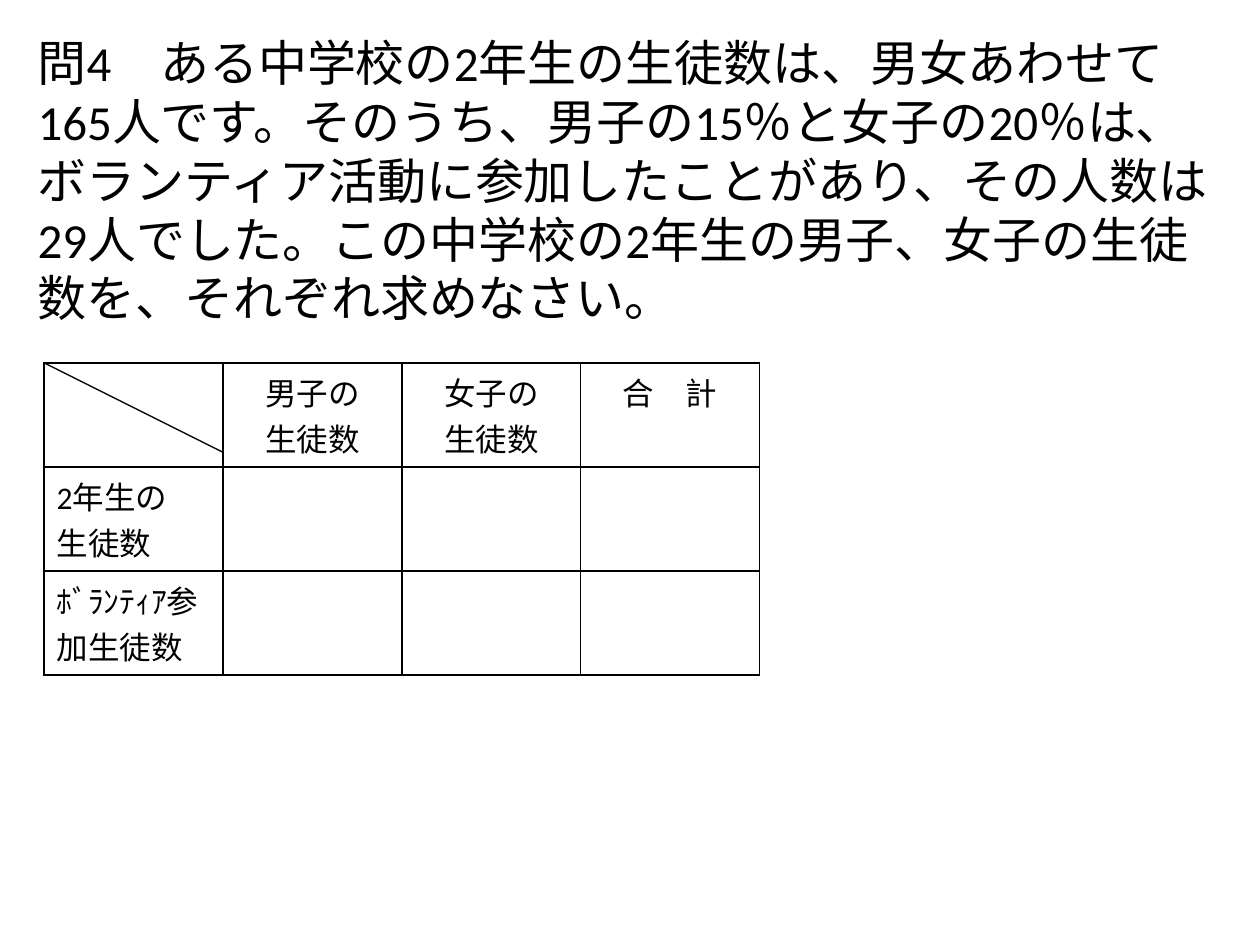
"""Build a word-problem slide with a blank table for organising the quantities."""
from dataclasses import dataclass

from lxml import etree
from pptx import Presentation
from pptx.dml.color import RGBColor
from pptx.enum.shapes import MSO_CONNECTOR
from pptx.enum.text import PP_ALIGN
from pptx.oxml.ns import qn
from pptx.util import Inches, Pt

LEFT, CENTER = PP_ALIGN.LEFT, PP_ALIGN.CENTER
STRAIGHT = MSO_CONNECTOR.STRAIGHT


@dataclass(frozen=True)
class Theme:
    font: str = "Calibri"
    ink: str = "000000"
    problem_size: int = 28
    table_size: int = 18
    border_width: float = 1
    diagonal_width: float = 0.75


theme = Theme()
ink = RGBColor.from_string(theme.ink)


def write_text(frame, text, size, align=LEFT, space_before=0):
    for index, line in enumerate(text.split("\n")):
        paragraph = frame.add_paragraph() if index else frame.paragraphs[0]
        paragraph.alignment = align
        paragraph.space_before = Pt(space_before)
        run = paragraph.add_run()
        run.text = line
        run.font.name = theme.font
        run.font.size = Pt(size)
        run.font.color.rgb = ink


def set_borders(cell):
    properties = cell._tc.get_or_add_tcPr()
    for index, side in enumerate(("lnL", "lnR", "lnT", "lnB")):
        border = etree.Element(qn(f"a:{side}"), w=str(Pt(theme.border_width)))
        fill = etree.SubElement(border, qn("a:solidFill"))
        etree.SubElement(fill, qn("a:srgbClr"), val=theme.ink)
        properties.insert(index, border)


presentation = Presentation()
presentation.slide_width = Inches(10)
presentation.slide_height = Inches(7.5)
slide = presentation.slides.add_slide(presentation.slide_layouts[6])

problem = (
    "問4　ある中学校の2年生の生徒数は、男女あわせて165人です。"
    "そのうち、男子の15％と女子の20％は、ボランティア活動に参加したことがあり、"
    "その人数は29人でした。この中学校の2年生の男子、女子の生徒数を、それぞれ求めなさい。"
)
problem_box = slide.shapes.add_textbox(Inches(0.2), Inches(0.21), Inches(9.69), Inches(2.52))
problem_box.text_frame.word_wrap = True
write_text(problem_box.text_frame, problem, theme.problem_size, space_before=3)

table_rows = [
    ["", "男子の\n生徒数", "女子の\n生徒数", "合　計"],
    ["2年生の\n生徒数", "", "", ""],
    ["ﾎﾞﾗﾝﾃｨｱ参加生徒数", "", "", ""],
]
table_left, table_top = Inches(0.35), Inches(2.88)
column_width, table_height = Inches(1.42), Inches(2.48)
row_count, column_count = len(table_rows), len(table_rows[0])
table = slide.shapes.add_table(
    row_count, column_count, table_left, table_top,
    column_width * column_count, table_height,
).table
table.first_row = False
table.horz_banding = False
for row_index, labels in enumerate(table_rows):
    for column_index, label in enumerate(labels):
        cell = table.cell(row_index, column_index)
        cell.fill.background()
        set_borders(cell)
        if label:
            align = LEFT if row_index else CENTER
            write_text(cell.text_frame, label, theme.table_size, align=align)

diagonal = slide.shapes.add_connector(
    STRAIGHT, table_left, table_top, table_left + column_width, table_top + Inches(0.71)
)
diagonal.line.color.rgb = ink
diagonal.line.width = Pt(theme.diagonal_width)
etree.SubElement(diagonal._element.spPr, qn("a:effectLst"))

presentation.save("out.pptx")
